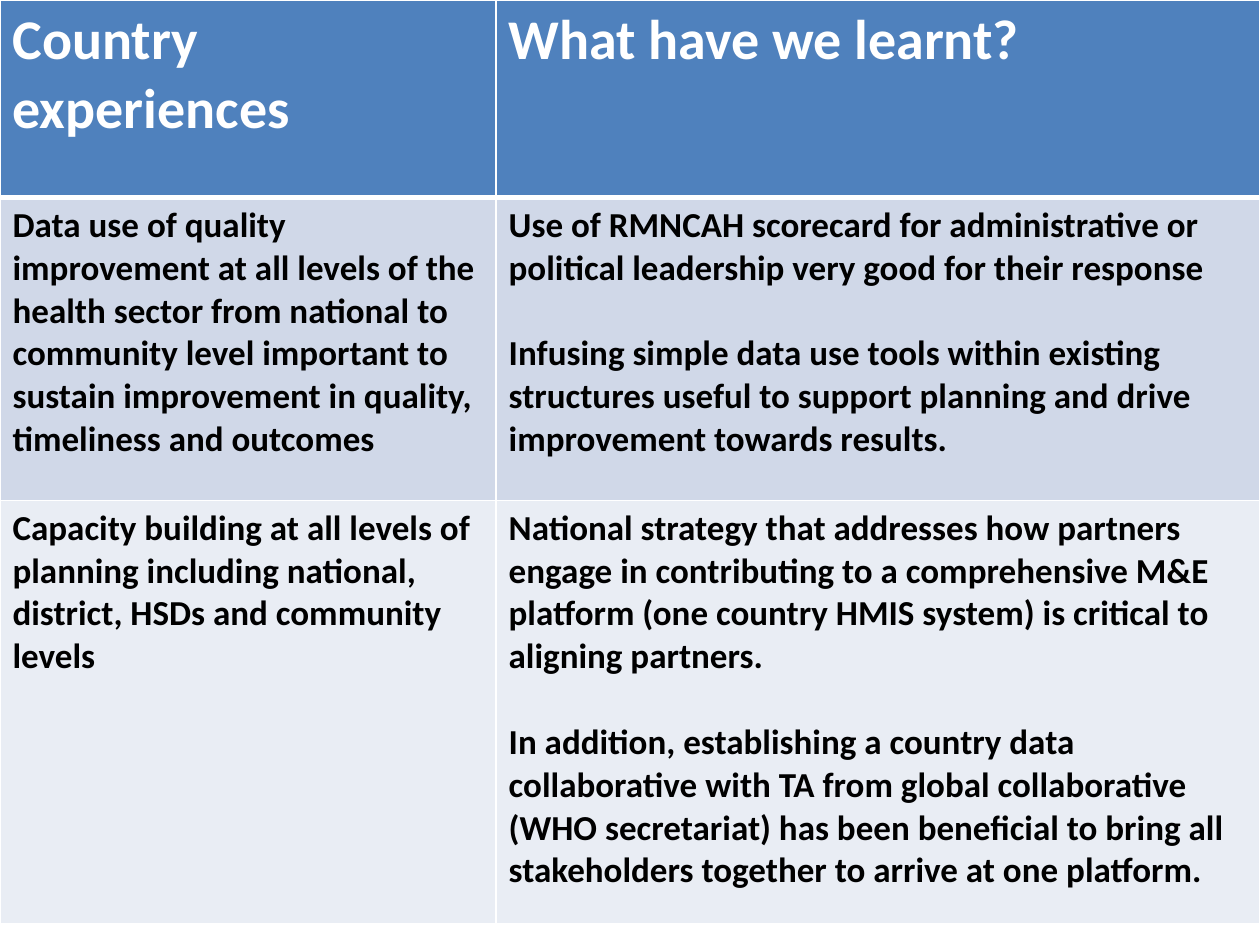
from dataclasses import dataclass

from lxml import etree
from pptx import Presentation
from pptx import util as u
from pptx.dml.color import RGBColor
from pptx.oxml.ns import qn


@dataclass(frozen=True)
class Theme:
    font: str = "Calibri"
    header_size: int = 32
    body_size: int = 20
    line_height: float = 1.22
    white: str = "FFFFFF"
    black: str = "000000"
    header_fill: str = "4F81BD"
    bands: tuple = ("D0D8E8", "E9EDF4")
    thin: int = 1
    thick: int = 3


class SlideBuilder:
    def __init__(self, slide, theme):
        self.s, self.theme = slide, theme

    def table(self, rows, widths, heights):
        shape = self.s.shapes.add_table(len(rows), len(widths), 0, 0,
                                        u.Pt(sum(widths)), u.Pt(sum(heights)))
        tbl = shape.table
        for column, width in zip(tbl.columns, widths):
            column.width = u.Pt(width)
        for i, (row, height) in enumerate(zip(rows, heights)):
            tbl.rows[i].height = u.Pt(height)
            for j, content in enumerate(row):
                self.cell(tbl.cell(i, j), content, i)

    def cell(self, cell, content, row):
        t = self.theme
        header = row == 0
        fill = t.header_fill if header else t.bands[(row - 1) % len(t.bands)]
        cell.fill.solid()
        cell.fill.fore_color.rgb = RGBColor.from_string(fill)
        self.borders(cell, top=t.thick if row == 1 else t.thin,
                     bottom=t.thick if header else t.thin)
        self.text(cell.text_frame, content,
                  t.header_size if header else t.body_size,
                  t.white if header else t.black)

    def text(self, tf, content, size, color):
        tf.text = content
        for i, p in enumerate(tf.paragraphs):
            if i:  # one line of space between paragraphs
                p.space_before = u.Pt(size * self.theme.line_height)
            for r in p.runs:
                r.font.name = self.theme.font
                r.font.size = u.Pt(size)
                r.font.bold = True
                r.font.color.rgb = RGBColor.from_string(color)

    def borders(self, cell, top, bottom):
        # Border lines come before the fill in the cell properties
        thin = self.theme.thin
        sides = {"a:lnL": thin, "a:lnR": thin, "a:lnT": top, "a:lnB": bottom}
        tc_pr = cell._tc.get_or_add_tcPr()
        for i, (tag, width) in enumerate(sides.items()):
            ln = etree.Element(qn(tag), w=str(u.Pt(width)))
            fill = etree.SubElement(ln, qn("a:solidFill"))
            etree.SubElement(fill, qn("a:srgbClr"), val=self.theme.white)
            tc_pr.insert(i, ln)


ROWS = [
    ("Country experiences", "What have we learnt?"),
    ("Data use of quality improvement at all levels of the health sector from "
     "national to community level important to sustain improvement in quality, "
     "timeliness and outcomes",
     "Use of RMNCAH scorecard for administrative or political leadership very "
     "good for their response\n"
     "Infusing simple data use tools within existing structures useful to "
     "support planning and drive improvement towards results."),
    ("Capacity building at all levels of planning including national, "
     "district, HSDs and community levels",
     "National strategy that addresses how partners engage in contributing to "
     "a comprehensive M&E platform (one country HMIS system) is critical to "
     "aligning partners.\n"
     "In addition, establishing a country data collaborative with TA from "
     "global collaborative (WHO secretariat) has been beneficial to bring all "
     "stakeholders together to arrive at one platform."),
]


def main():
    prs = Presentation()
    prs.slide_width, prs.slide_height = u.Pt(720), u.Pt(540)
    s = prs.slides.add_slide(prs.slide_layouts[6])

    # Full-width table of experiences and lessons
    SlideBuilder(s, Theme()).table(ROWS, widths=(283.5, 436.5),
                                   heights=(113, 173, 242))
    prs.save("out.pptx")


if __name__ == "__main__":
    main()
